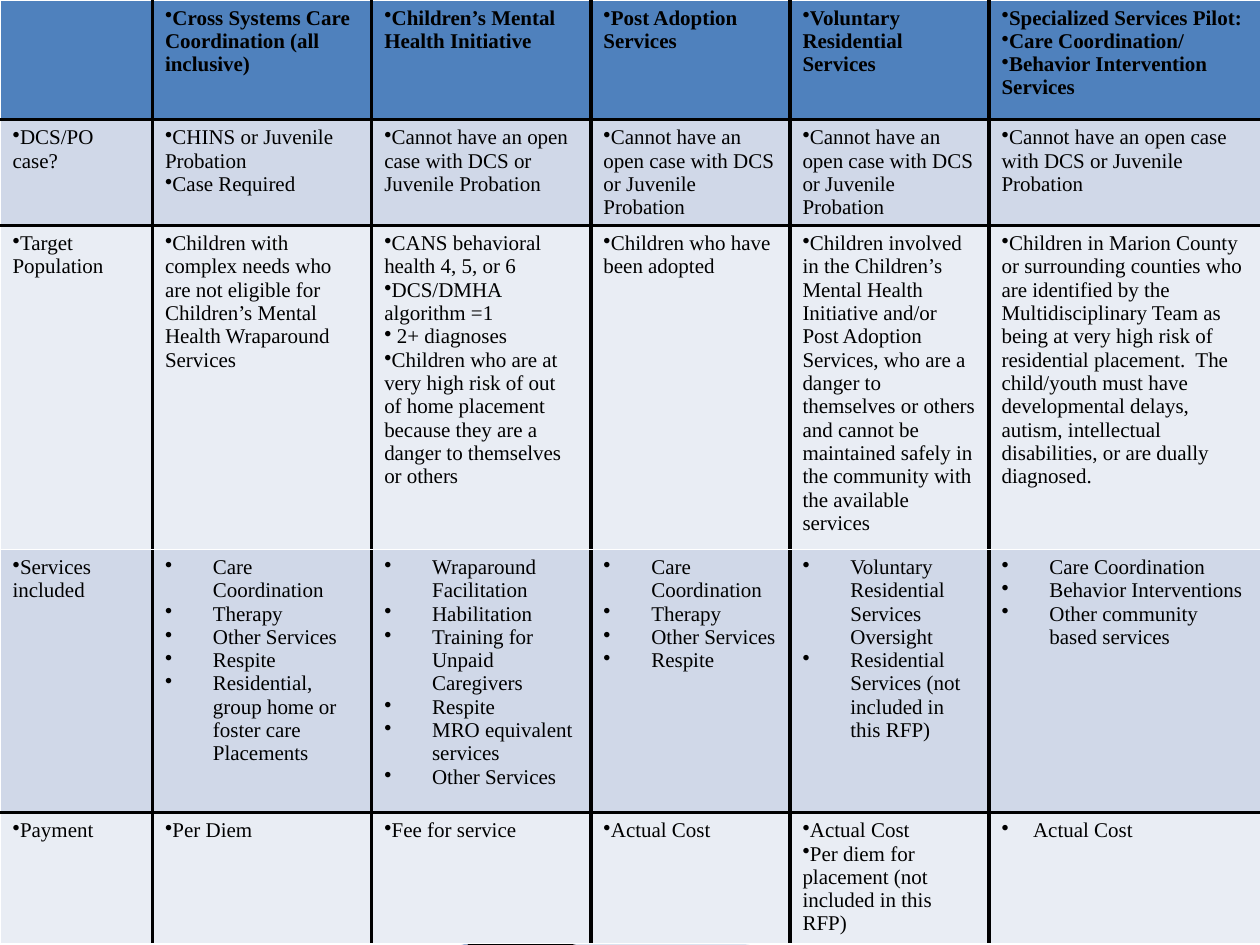
from lxml.etree import SubElement
from pptx import Presentation
from pptx.dml.color import RGBColor
from pptx.enum.shapes import MSO_CONNECTOR
from pptx.oxml.ns import qn
from pptx.util import Inches, Pt

# Content: one list per table row, one line per bullet
NO_CASE = "Cannot have an open case with DCS or Juvenile Probation"
ROWS = [
    ["",
     "Cross Systems Care Coordination (all inclusive)",
     "Children’s Mental Health Initiative",
     "Post Adoption Services",
     "Voluntary Residential Services",
     "Specialized Services Pilot:\nCare Coordination/\nBehavior Intervention Services"],
    ["DCS/PO case?",
     "CHINS or Juvenile Probation\nCase Required",
     NO_CASE, NO_CASE, NO_CASE, NO_CASE],
    ["Target Population",
     "Children with complex needs who are not eligible for Children’s Mental "
     "Health Wraparound Services",
     "CANS behavioral health 4, 5, or 6\nDCS/DMHA algorithm =1\n 2+ diagnoses\n"
     "Children who are at very high risk of out of home placement because they "
     "are a danger to themselves or others",
     "Children who have been adopted",
     "Children involved in the Children’s Mental Health Initiative and/or Post "
     "Adoption Services, who are a danger to themselves or others and cannot be "
     "maintained safely in the community with the available services",
     "Children in Marion County or surrounding counties who are identified by the "
     "Multidisciplinary Team as being at very high risk of residential placement.  "
     "The child/youth must have developmental delays, autism, intellectual "
     "disabilities, or are dually diagnosed."],
    ["Services included",
     "Care Coordination\nTherapy\nOther Services\nRespite\n"
     "Residential, group home or foster care Placements",
     "Wraparound Facilitation\nHabilitation\nTraining for Unpaid Caregivers\n"
     "Respite\nMRO equivalent services\nOther Services",
     "Care Coordination\nTherapy\nOther Services\nRespite",
     "Voluntary Residential Services Oversight\n"
     "Residential Services (not included in this RFP)",
     "Care Coordination\nBehavior Interventions\nOther community based services"],
    ["Payment", "Per Diem", "Fee for service", "Actual Cost",
     "Actual Cost\nPer diem for placement (not included in this RFP)",
     "Actual Cost"],
]
WIDTHS = [1.21, 1.74, 1.74, 1.58, 1.58, 2.16]
HEIGHTS = [0.95, 0.76, 2.57, 2.09, 1.04]
FILLS = ["4F81BD", "D0D8E8", "E9EDF4", "D0D8E8", "E9EDF4"]

# Grid rules, from the first edge to the last
THIN, THICK = ("FFFFFF", 1), ("000000", 2.25)
ACROSS = [THIN, THICK, THICK, THIN, THICK, THIN]
DOWN = [THIN] + [THICK] * 5 + [THIN]

# Swoosh behind the table, in hundredths of an inch: points, colour, opacity
SWOOSH = [
    ([(55, 651), (595, 750), (456, 750), (55, 650)], "A7B9DB", 40),
    ([(53, 649), (457, 750), (372, 750), (54, 650)], "000000", 100),
]


def color(code):
    return RGBColor.from_string(code)


def paint(fill, code):
    fill.solid()
    fill.fore_color.rgb = color(code)


def border(cell, sides):
    props = cell._tc.get_or_add_tcPr()
    for side, (code, width) in zip("LRTB", sides):
        line = SubElement(props, qn("a:ln" + side), w=str(Pt(width)))
        solid = SubElement(line, qn("a:solidFill"))
        SubElement(solid, qn("a:srgbClr"), val=code)


def indent(row, col):
    if row == 3 and col:
        return 0.38
    return 0.25 if (row, col) == (4, 5) else 0


def write(cell, text, hang, bold):
    cell.text_frame.text = text
    for para in cell.text_frame.paragraphs:
        props = para._p.get_or_add_pPr()
        props.set("marL", str(Inches(hang)))
        props.set("indent", str(-Inches(hang)))
        SubElement(props, qn("a:buChar"), char="•")
        for run in para.runs:
            font = run.font
            font.name, font.size, font.bold = "Times New Roman", Pt(12), bold
            font.color.rgb = color("000000")


deck = Presentation()
deck.slide_width, deck.slide_height = Inches(10), Inches(7.5)
slide = deck.slides.add_slide(deck.slide_layouts[6])
shapes = slide.shapes

# Swoosh
for points, code, alpha in SWOOSH:
    pen = shapes.build_freeform(*points[0], scale=Inches(0.01))
    pen.add_line_segments(points[1:], close=True)
    band = pen.convert_to_shape()
    band.shadow.inherit = False
    band.line.fill.background()
    paint(band.fill, code)
    if alpha < 100:
        tint = band._element.spPr.find(".//" + qn("a:srgbClr"))
        SubElement(tint, qn("a:alpha"), val=str(alpha * 1000))

edge = shapes.add_connector(MSO_CONNECTOR.STRAIGHT, Inches(0), Inches(6.33),
                            Inches(3.71), Inches(7.5))
edge.line.color.rgb = color("9EB3D6")
edge.line.width = Pt(0.95)
SubElement(edge._element.spPr, qn("a:effectLst"))

# Service table
table = shapes.add_table(len(ROWS), len(WIDTHS), 0, 0, Inches(sum(WIDTHS)),
                         Inches(sum(HEIGHTS))).table
for col, width in zip(table.columns, WIDTHS):
    col.width = Inches(width)
for row, height in zip(table.rows, HEIGHTS):
    row.height = Inches(height)

for r, texts in enumerate(ROWS):
    for c, text in enumerate(texts):
        cell = table.cell(r, c)
        border(cell, (DOWN[c], DOWN[c + 1], ACROSS[r], ACROSS[r + 1]))
        paint(cell.fill, FILLS[r])
        if text:
            write(cell, text, indent(r, c), r == 0)

deck.save("out.pptx")
